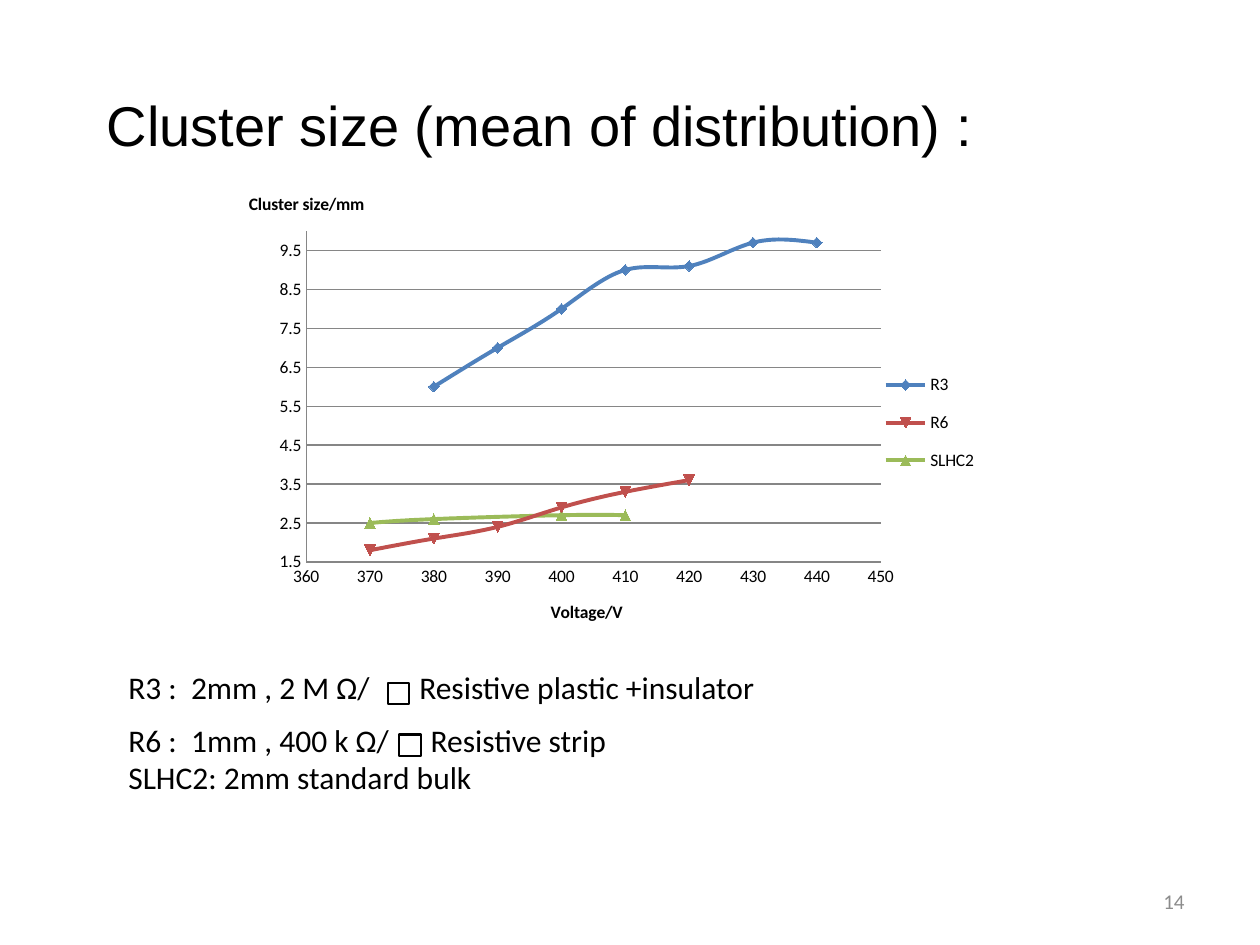
from lxml import etree
from pptx import Presentation
from pptx.chart.data import XyChartData
from pptx.dml.color import RGBColor
from pptx.enum.chart import XL_CHART_TYPE, XL_LEGEND_POSITION, XL_MARKER_STYLE, XL_TICK_MARK
from pptx.enum.shapes import MSO_SHAPE
from pptx.enum.text import MSO_ANCHOR, PP_ALIGN
from pptx.oxml.ns import qn
from pptx.util import Inches, Pt

SMOOTH = XL_CHART_TYPE.XY_SCATTER_SMOOTH
LEGEND_RIGHT = XL_LEGEND_POSITION.RIGHT
NO_TICK = XL_TICK_MARK.NONE
DIAMOND = XL_MARKER_STYLE.DIAMOND
AUTOMATIC = XL_MARKER_STYLE.AUTOMATIC
TRIANGLE = XL_MARKER_STYLE.TRIANGLE
RECT = MSO_SHAPE.RECTANGLE
TOP, MIDDLE = MSO_ANCHOR.TOP, MSO_ANCHOR.MIDDLE
LEFT, RIGHT = PP_ALIGN.LEFT, PP_ALIGN.RIGHT

BLACK = RGBColor(0, 0, 0)
GRAY = RGBColor(0x8C, 0x8C, 0x8C)
AXIS_GRAY = RGBColor(0x86, 0x86, 0x86)
BLUE = RGBColor(0x4F, 0x81, 0xBD)
RED = RGBColor(0xC0, 0x50, 0x4D)
GREEN = RGBColor(0x9B, 0xBB, 0x59)

SERIES = [
    ("R3", BLUE, DIAMOND, [(380, 6), (390, 7), (400, 8), (410, 9),
                           (420, 9.1), (430, 9.7), (440, 9.7)]),
    ("R6", RED, AUTOMATIC, [(370, 1.8), (380, 2.1), (390, 2.4),
                            (400, 2.9), (410, 3.3), (420, 3.6)]),
    ("SLHC2", GREEN, TRIANGLE, [(370, 2.5), (380, 2.6), (400, 2.7), (410, 2.7)]),
]


def add_text(slide, box, lines, size, font="Calibri", color=BLACK,
             align=LEFT, anchor=TOP, tab=None):
    tf = slide.shapes.add_textbox(*map(Inches, box)).text_frame
    tf.word_wrap = True
    tf.vertical_anchor = anchor
    for i, line in enumerate(lines):
        p = tf.add_paragraph() if i else tf.paragraphs[0]
        p.text = line
        p.alignment = align
        p.font.size = Pt(size)
        p.font.name = font
        p.font.color.rgb = color
        if tab and "\t" in line:
            stops = etree.Element(qn("a:tabLst"))
            etree.SubElement(stops, qn("a:tab"), pos=str(Inches(tab)), algn="l")
            p._p.get_or_add_pPr().insert(0, stops)


def add_square(slide, left, top, side=0.17):
    sp = slide.shapes.add_shape(RECT, *map(Inches, (left, top, side, side)))
    sp.shadow.inherit = False
    sp.fill.background()
    sp.line.color.rgb = BLACK
    sp.line.width = Pt(1.25)


def set_layout(parent, index, x, y, w=None, h=None, inner=False):
    for old in parent.findall(qn("c:layout")):
        parent.remove(old)
    layout = etree.Element(qn("c:layout"))
    manual = etree.SubElement(layout, qn("c:manualLayout"))
    parts = [("xMode", "edge"), ("yMode", "edge"), ("x", x), ("y", y), ("w", w), ("h", h)]
    if inner:
        parts.insert(0, ("layoutTarget", "inner"))
    for tag, value in parts:
        if value is not None:
            etree.SubElement(manual, qn("c:" + tag), val=str(value))
    parent.insert(index, layout)


def style_axis(axis, title, low, high, step):
    axis.minimum_scale, axis.maximum_scale, axis.major_unit = low, high, step
    axis.major_tick_mark = axis.minor_tick_mark = NO_TICK
    axis.format.line.color.rgb = AXIS_GRAY
    axis.format.line.width = Pt(0.75)
    axis.tick_labels.number_format = "General"
    axis.tick_labels.number_format_is_linked = False
    tf = axis.axis_title.text_frame
    tf.text = title
    font = tf.paragraphs[0].font
    font.size, font.bold, font.name = Pt(10), True, "Calibri"
    font.color.rgb = BLACK


def add_cluster_chart(slide, box):
    data = XyChartData()
    for name, _, _, points in SERIES:
        series = data.add_series(name)
        for x, y in points:
            series.add_data_point(x, y)
    chart = slide.shapes.add_chart(SMOOTH, *map(Inches, box), data).chart
    chart.has_title = False
    chart.font.size, chart.font.name = Pt(10), "Calibri"
    chart.font.color.rgb = BLACK

    style_axis(chart.category_axis, "Voltage/V", 360, 450, 10)
    chart.category_axis.has_major_gridlines = False
    axis = chart.value_axis
    style_axis(axis, "Cluster size/mm", 1.5, 10, 1)
    axis.has_major_gridlines = True
    axis.major_gridlines.format.line.color.rgb = AXIS_GRAY
    axis.major_gridlines.format.line.width = Pt(0.75)
    axis.axis_title.text_frame._txBody.bodyPr.set("rot", "0")
    set_layout(axis.axis_title._element, 1, 0.02, 0.06)

    chart.has_legend = True
    chart.legend.position = LEGEND_RIGHT
    chart.legend.include_in_layout = False
    set_layout(chart.legend._element, 1, 0.86, 0.38, 0.13, 0.25)
    set_layout(chart._chartSpace.chart.plotArea, 0, 0.1, 0.14, 0.76, 0.63, inner=True)

    plot = chart.plots[0]
    plot.vary_by_categories = False
    for series, (_, color, marker, _) in zip(plot.series, SERIES):
        series.smooth = True
        series._element.find(qn("c:smooth")).set("val", "1")
        series.format.line.color.rgb = color
        series.format.line.width = Pt(2.25)
        series.marker.style = marker
        series.marker.size = 6
        series.marker.format.fill.solid()
        series.marker.format.fill.fore_color.rgb = color
        series.marker.format.line.color.rgb = color


def add_detector_notes(slide, left, top):
    add_text(slide, (left, top, 6.33, 0.4),
             ["R3 :  2mm , 2 M Ω/\tResistive plastic +insulator"], 18, tab=2.31)
    add_square(slide, left + 2.16, top + 0.17)
    add_text(slide, (left, top + 0.42, 5.58, 0.71),
             ["R6 :  1mm , 400 k Ω/\tResistive strip", "SLHC2: 2mm standard bulk"],
             18, tab=2.4)
    add_square(slide, left + 2.25, top + 0.58)


def main():
    prs = Presentation()
    prs.slide_width, prs.slide_height = Inches(10), Inches(7.5)
    slide = prs.slides.add_slide(prs.slide_layouts[6])
    add_text(slide, (0.75, 0.67, 8.33, 0.64),
             ["Cluster size (mean of distribution) :"], 32, "Arial")
    add_cluster_chart(slide, (1.83, 1.25, 6, 4.17))
    add_detector_notes(slide, 0.92, 5.25)
    add_text(slide, (7.17, 6.95, 2.33, 0.4), ["14"], 12,
             color=GRAY, align=RIGHT, anchor=MIDDLE)
    prs.save("out.pptx")


if __name__ == "__main__":
    main()
